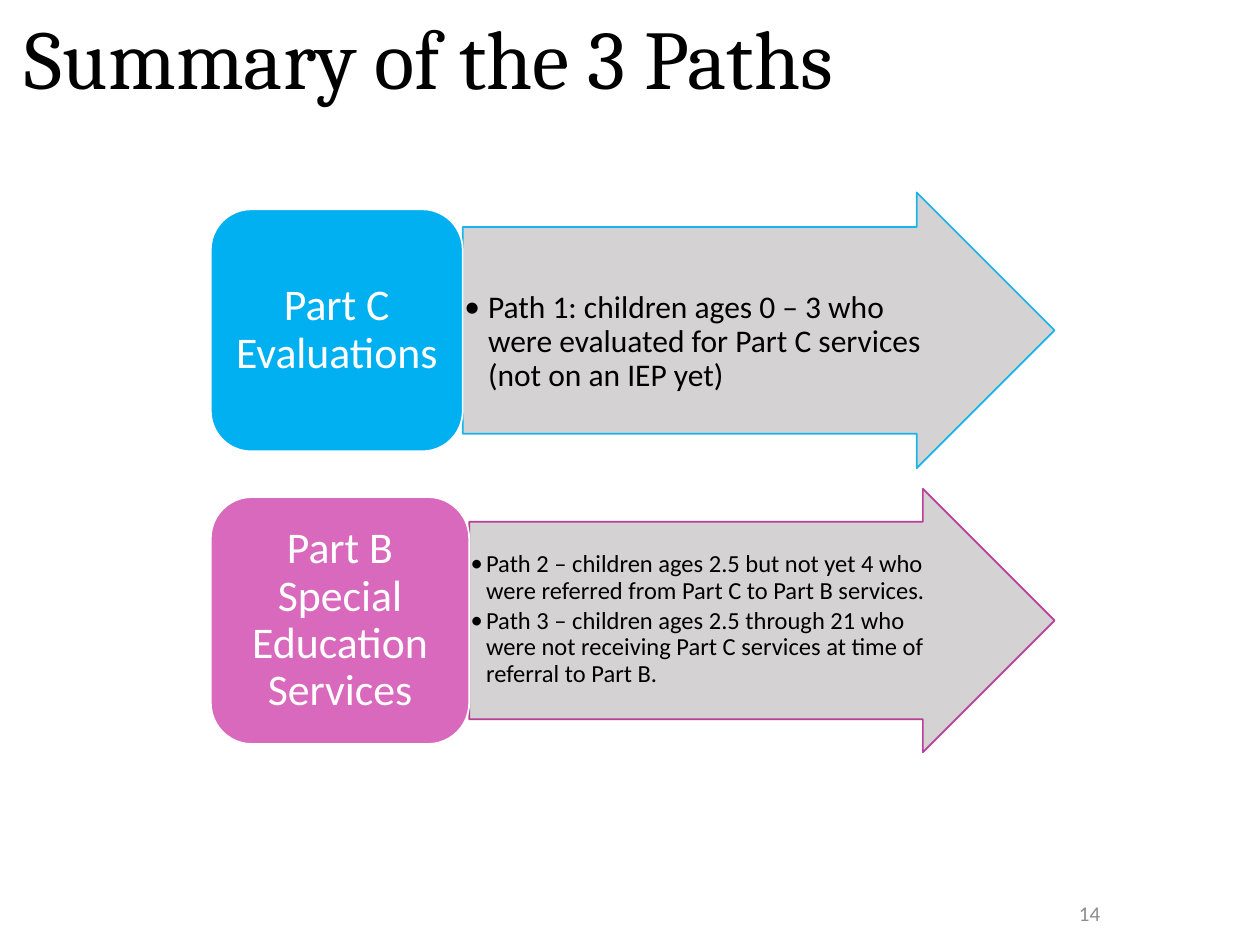
from lxml.etree import SubElement
from pptx import Presentation
from pptx.dml.color import RGBColor
from pptx.enum.shapes import MSO_SHAPE as Shape
from pptx.enum.text import MSO_ANCHOR as Anchor, PP_ALIGN as Align
from pptx.oxml.ns import qn
from pptx.util import Cm, Pt

BLACK = RGBColor(0x00, 0x00, 0x00)
WHITE = RGBColor(0xFF, 0xFF, 0xFF)
GRAY = RGBColor(0xD0, 0xCE, 0xCE)
NUMBER_GRAY = RGBColor(0x8C, 0x8C, 0x8C)
BLUE = RGBColor(0x00, 0xB0, 0xF0)
PINK = RGBColor(0xD9, 0x69, 0xBC)
MAGENTA = RGBColor(0xB5, 0x2D, 0x91)

LEFT, RIGHT = 4.25, 21.26


def style_text(p, size, color, font="Calibri", align=Align.LEFT, spacing=0.9):
    """Format a paragraph and its runs."""
    p.alignment = align
    p.line_spacing = spacing
    for r in p.runs:
        r.font.size = Pt(size)
        r.font.name = font
        r.font.color.rgb = color


def set_insets(tf, left, top, right, bottom):
    """Set the four text margins in centimetres."""
    tf.margin_left, tf.margin_top = Cm(left), Cm(top)
    tf.margin_right, tf.margin_bottom = Cm(right), Cm(bottom)


def add_bullet(p, indent):
    """Give a paragraph a bullet with a hanging indent."""
    pPr = p._p.get_or_add_pPr()
    pPr.set("marL", str(Cm(indent)))
    pPr.set("indent", str(-Cm(indent)))
    SubElement(pPr, qn("a:buFont"), typeface="Calibri")
    SubElement(pPr, qn("a:buChar"), char="•")


def set_opacity(sp, percent):
    """Make the fill and line of a shape slightly transparent."""
    for clr in sp._element.spPr.iter(qn("a:srgbClr")):
        SubElement(clr, qn("a:alpha"), val=str(percent * 1000))


def add_filled_shape(slide, kind, x, y, w, h, fill, line):
    """Add a flat shape with a fill and a thin outline."""
    sp = slide.shapes.add_shape(kind, Cm(x), Cm(y), Cm(w), Cm(h))
    sp.shadow.inherit = False
    sp.fill.solid()
    sp.fill.fore_color.rgb = fill
    sp.line.color.rgb = line
    sp.line.width = Pt(1)
    sp.text_frame.word_wrap = True
    return sp


def add_text(slide, text, x, y, w, h):
    """Add a wrapping, vertically centred text box."""
    tf = slide.shapes.add_textbox(Cm(x), Cm(y), Cm(w), Cm(h)).text_frame
    tf.word_wrap = True
    tf.vertical_anchor = Anchor.MIDDLE
    tf.text = text
    return tf


def add_arrow(slide, x, middle, height, line, paths, size, indent, top):
    """Add a right arrow that lists its paths as bullets."""
    sp = add_filled_shape(slide, Shape.RIGHT_ARROW, x, middle - height / 2,
                          RIGHT - x, height, GRAY, line)
    sp.adjustments[0] = 0.75
    set_opacity(sp, 90)
    tf = sp.text_frame
    set_insets(tf, 0.03, top, 0.2, 0.03)
    tf.vertical_anchor = Anchor.TOP
    tf.text = "\n".join(paths)
    for p in tf.paragraphs:
        add_bullet(p, indent)
        style_text(p, size, BLACK)
        p.space_after = Pt(2)


def add_label(slide, text, middle, width, height, fill):
    """Add the rounded label at the start of a row."""
    sp = add_filled_shape(slide, Shape.ROUNDED_RECTANGLE, LEFT,
                          middle - height / 2, width, height, fill, WHITE)
    tf = sp.text_frame
    tf.vertical_anchor = Anchor.MIDDLE
    tf.text = text
    style_text(tf.paragraphs[0], 25, WHITE, align=Align.CENTER)


def main():
    """Build the slide and save it."""
    prs = Presentation()
    prs.slide_width, prs.slide_height = Cm(25.4), Cm(19.05)
    slide = prs.slides.add_slide(prs.slide_layouts[6])

    tf = add_text(slide, "Summary of the 3 Paths", 0, 0.53, 21.89, 1.45)
    set_insets(tf, 0.5, 0.13, 0.25, 0.13)
    style_text(tf.paragraphs[0], 47.7, BLACK, "Cambria")

    part_c = ["Path 1: children ages 0 – 3 who were evaluated for "
              "Part C services (not on an IEP yet)"]
    part_b = ["Path 2 – children ages 2.5 but not yet 4 who were referred "
              "from Part C to Part B services.",
              "Path 3 – children ages 2.5 through 21 who were not receiving "
              "Part C services at time of referral to Part B."]

    add_arrow(slide, LEFT + 5.08, 6.66, 5.56, BLUE, part_c, 18, 0.48, 1.3)
    add_label(slide, "Part C Evaluations", 6.66, 5.08, 4.88, BLUE)
    add_arrow(slide, LEFT + 5.21, 12.51, 5.31, MAGENTA, part_b, 14, 0.31, 0.6)
    add_label(slide, "Part B Special Education Services", 12.51, 5.21, 4.98, PINK)

    tf = add_text(slide, "14", 17.93, 18.16, 4.5, 0.51)
    style_text(tf.paragraphs[0], 12, NUMBER_GRAY, align=Align.RIGHT, spacing=1.0)

    prs.save("out.pptx")


if __name__ == "__main__":
    main()
